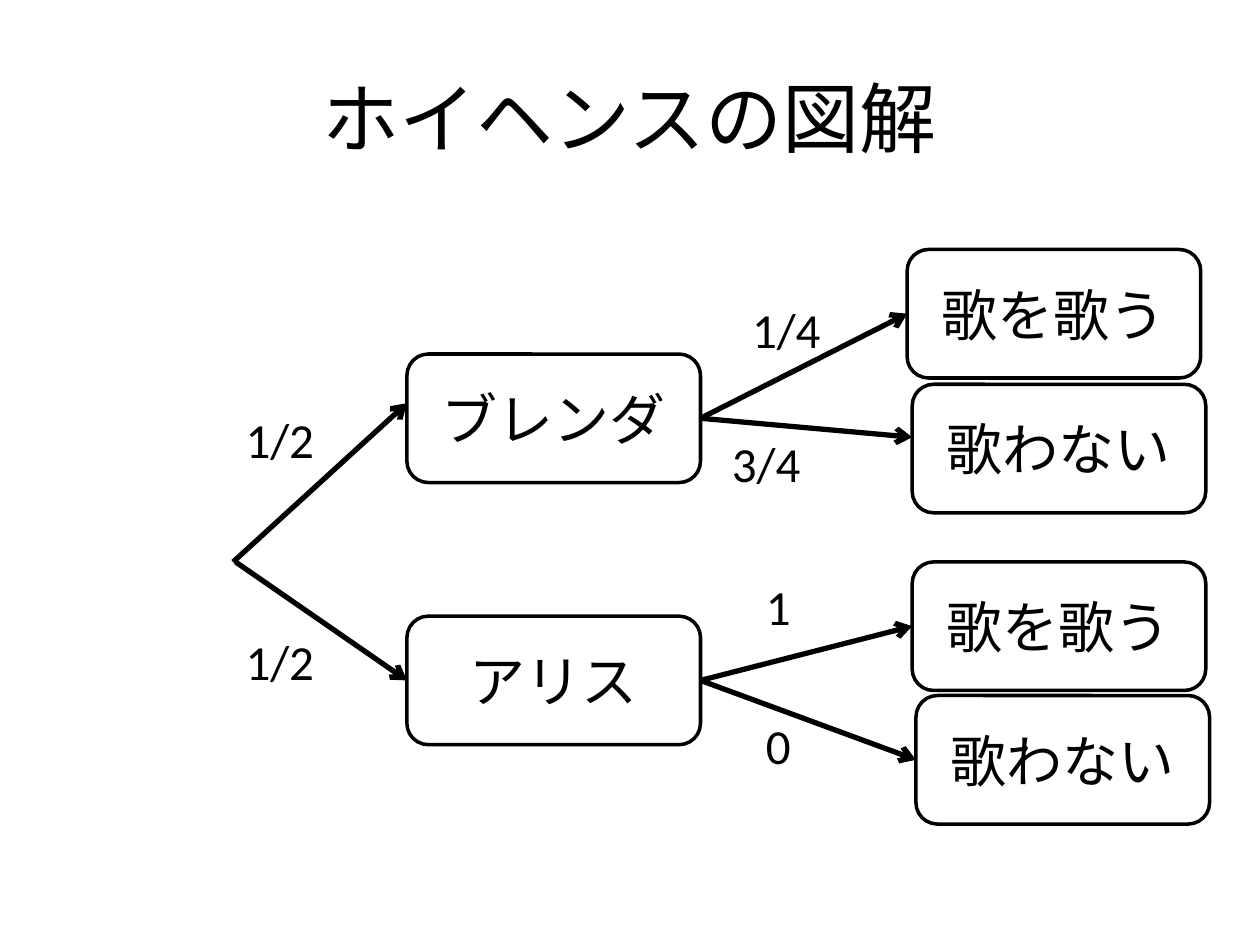
from lxml.etree import SubElement
from pptx import Presentation
from pptx.dml.color import RGBColor
from pptx.enum.shapes import MSO_CONNECTOR, MSO_SHAPE
from pptx.enum.text import MSO_ANCHOR, PP_ALIGN
from pptx.oxml.ns import qn
from pptx.util import Inches, Pt

COLORS = {"ink": "000000", "paper": "FFFFFF"}
LEFT, RIGHT = 1, 3  # connection sites of a rectangle


class TreeSlide:
    """Style and current slide of a probability tree."""

    font = "Calibri"
    node_size = (2.33, 1.02)
    label_size = (1.02, 0.57)

    def __init__(self, page):
        self.page = page

    def color(self, name):
        return RGBColor.from_string(COLORS[name])

    def set_text(self, shape, text, size, align, anchor):
        frame = shape.text_frame
        for name, value in {"word_wrap": True, "vertical_anchor": anchor}.items():
            setattr(frame, name, value)
        para = frame.paragraphs[0]
        para.alignment = align
        span = para.add_run()
        span.text = text
        for name, value in {"name": self.font, "size": Pt(size)}.items():
            setattr(span.font, name, value)
        span.font.color.rgb = self.color("ink")

    def text(self, text, left, top, width, height, size,
             align=PP_ALIGN.LEFT, anchor=MSO_ANCHOR.TOP):
        box = self.page.shapes.add_textbox(*map(Inches, (left, top, width, height)))
        self.set_text(box, text, size, align, anchor)

    def label(self, text, left, top):
        self.text(text, left, top, *self.label_size, 28)

    def node(self, text, left, top):
        box = self.page.shapes.add_shape(
            MSO_SHAPE.ROUNDED_RECTANGLE, *map(Inches, (left, top, *self.node_size)))
        box.shadow.inherit = False
        box.fill.solid()
        box.fill.fore_color.rgb = self.color("paper")
        box.line.color.rgb = self.color("ink")
        box.line.width = Pt(2)
        self.set_text(box, text, 32, PP_ALIGN.CENTER, MSO_ANCHOR.MIDDLE)
        return box

    def arrow(self, start, end, source=None, target=None):
        line = self.page.shapes.add_connector(
            MSO_CONNECTOR.STRAIGHT, *map(Inches, (*start, *end)))
        if source is not None:
            line.begin_connect(source, RIGHT)
        if target is not None:
            line.end_connect(target, LEFT)
        line.line.color.rgb = self.color("ink")
        line.line.width = Pt(3)
        properties = line._element.spPr
        SubElement(properties.find(qn("a:ln")), qn("a:tailEnd"), type="arrow")
        SubElement(properties, qn("a:effectLst"))


def main():
    deck = Presentation()
    deck.slide_width, deck.slide_height = Inches(10), Inches(7.5)
    tree = TreeSlide(deck.slides.add_slide(deck.slide_layouts[6]))

    # Title
    tree.text("ホイヘンスの図解", 0.5, 0.3, 9, 1.25, 44,
              PP_ALIGN.CENTER, MSO_ANCHOR.MIDDLE)

    # People
    brenda = tree.node("ブレンダ", 3.23, 2.81)
    alice = tree.node("アリス", 3.23, 4.89)

    # Outcomes
    brenda_sings = tree.node("歌を歌う", 7.2, 1.98)
    brenda_silent = tree.node("歌わない", 7.24, 3.05)
    alice_sings = tree.node("歌を歌う", 7.24, 4.46)
    alice_silent = tree.node("歌わない", 7.27, 5.52)

    # Branches; two of them end a little above the middle of their box
    for start, end, source, target in [
        ((1.85, 4.46), (3.23, 3.2), None, None),
        ((1.87, 4.46), (3.23, 5.4), None, alice),
        ((5.55, 3.32), (7.2, 2.49), brenda, brenda_sings),
        ((5.55, 3.32), (brenda_silent.left.inches, 3.47), brenda, None),
        ((5.55, 5.4), (7.24, 4.97), alice, alice_sings),
        ((5.55, 5.4), (7.27, 6.03), alice, alice_silent),
    ]:
        tree.arrow(start, end, source, target)

    # Probabilities
    for text, left, top in [
        ("1/2", 1.85, 3.2), ("1/2", 1.85, 4.96),
        ("1/4", 5.87, 2.33), ("3/4", 5.71, 3.39),
        ("1", 5.98, 4.53), ("0", 5.98, 5.63),
    ]:
        tree.label(text, left, top)

    deck.save("out.pptx")


if __name__ == "__main__":
    main()
